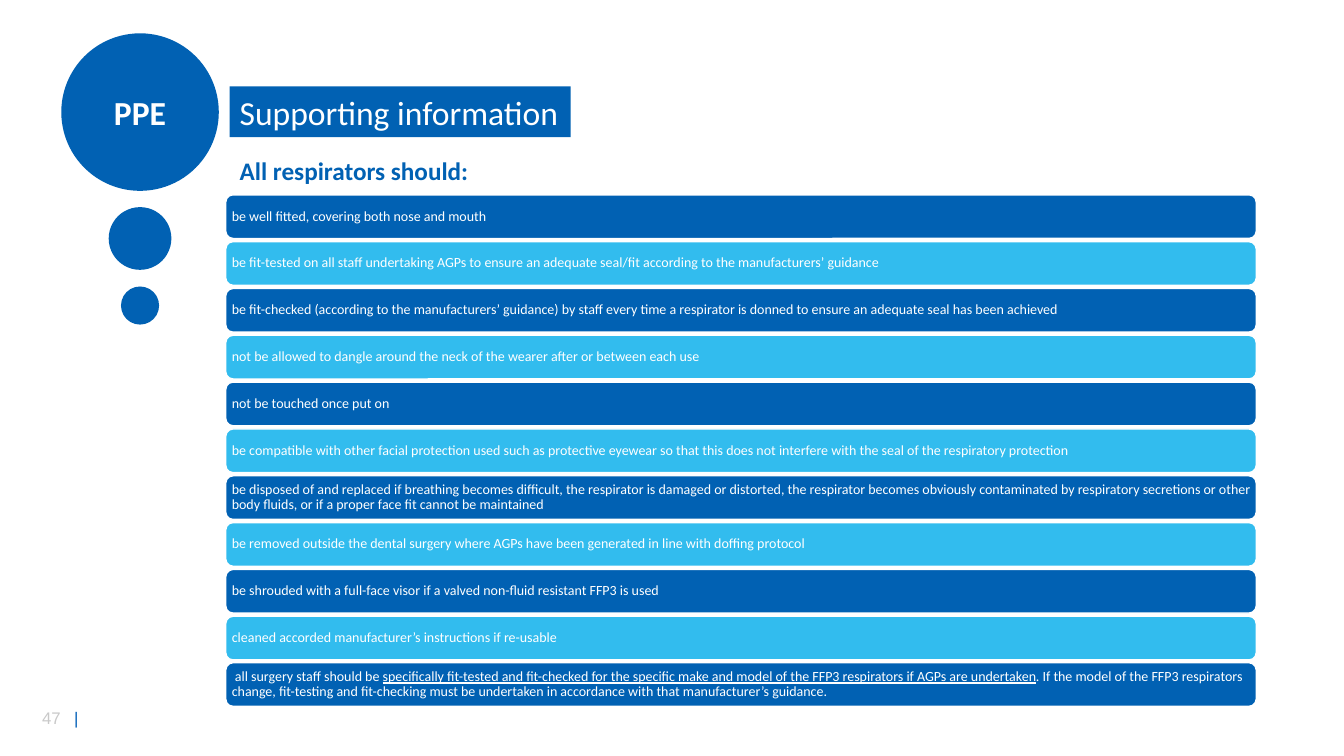
"""Build the PPE slide that lists what all respirators should do."""
import pptx
import pptx.dml.color
import pptx.enum.shapes
import pptx.enum.text
import pptx.oxml
import pptx.oxml.ns
import pptx.util

Cm = pptx.util.Cm
Pt = pptx.util.Pt
RGBColor = pptx.dml.color.RGBColor
SHAPE = pptx.enum.shapes.MSO_SHAPE
ALIGN = pptx.enum.text.PP_ALIGN
ANCHOR = pptx.enum.text.MSO_ANCHOR

BLUE = RGBColor(0x01, 0x61, 0xB3)
SKY = RGBColor(0x32, 0xBC, 0xEE)
WHITE = RGBColor(0xFF, 0xFF, 0xFF)
GREY = RGBColor(0xC9, 0xC9, 0xC9)
MARK_BLUE = RGBColor(0x00, 0x5E, 0xB8)

TITLE = "Supporting information"
SUBTITLE = "All respirators should:"
BADGE = "PPE"
PAGE_NUMBER = "47"
REQUIREMENTS = [
    "be well fitted, covering both nose and mouth",
    "be fit-tested on all staff undertaking AGPs to ensure an adequate seal/fit according to the manufacturers’ guidance",
    "be fit-checked (according to the manufacturers’ guidance) by staff every time a respirator is donned "
    "to ensure an adequate seal has been achieved",
    "not be allowed to dangle around the neck of the wearer after or between each use",
    "not be touched once put on",
    "be compatible with other facial protection used such as protective eyewear so that this does not "
    "interfere with the seal of the respiratory protection",
    "be disposed of and replaced if breathing becomes difficult, the respirator is damaged or distorted, "
    "the respirator becomes obviously contaminated by respiratory secretions or other body fluids, "
    "or if a proper face fit cannot be maintained",
    "be removed outside the dental surgery where AGPs have been generated in line with doffing protocol",
    "be shrouded with a full-face visor if a valved non-fluid resistant FFP3 is used",
    "cleaned accorded manufacturer’s instructions if re-usable",
]
STAFF_RULE = [
    ("all surgery staff should be ", {}),
    ("specifically fit-tested and fit-checked for the specific make and model of the FFP3 respirators "
     "if AGPs are undertaken", {"underline": True}),
    (". If the model of the FFP3 respirators change, fit-testing and fit-checking must be undertaken "
     "in accordance with that manufacturer’s guidance.", {}),
]

CIRCLE_CENTRE = 3.53
CIRCLES = [(0.84, 3.97), (5.22, 1.58), (7.22, 0.96)]
BAR_LEFT, BAR_TOP, BAR_WIDTH, BAR_HEIGHT = 5.69, 4.91, 25.97, 1.1
BAR_STEP = 1.18
STAFF_TOP = 16.7
HEADING_LEFT = 5.79


def write(shape, spans, **formats):
    """Write the spans as one paragraph with shared font values."""
    para = shape.text_frame.paragraphs[0]
    para.alignment = ALIGN.LEFT
    for text, changes in spans:
        span = para.add_run()
        span.text = text
        values = {"name": "Calibri", **formats, **changes}
        color = values.pop("color")
        for name, value in values.items():
            setattr(span.font, name, value)
        span.font.color.rgb = color
    return para


def add_filled(shapes, preset, left, top, width, height, color):
    """Add a flat filled shape without outline."""
    shape = shapes.add_shape(preset, Cm(left), Cm(top), Cm(width), Cm(height))
    shape.shadow.inherit = False
    shape.fill.solid()
    shape.fill.fore_color.rgb = color
    shape.line.fill.background()
    return shape


def add_bar(page, top, color, spans):
    """Add one rounded bar of the list."""
    bar = add_filled(page.shapes, SHAPE.ROUNDED_RECTANGLE, BAR_LEFT, top, BAR_WIDTH, BAR_HEIGHT, color)
    bar.line.color.rgb = WHITE
    bar.line.width = Pt(1)
    frame = bar.text_frame
    frame.word_wrap = True
    frame.vertical_anchor = ANCHOR.MIDDLE
    for side in ("left", "right", "top", "bottom"):
        setattr(frame, "margin_" + side, Cm(0.1))
    para = write(bar, spans, size=Pt(10), color=WHITE)
    para.line_spacing = 0.9
    return para


def add_badge(page):
    """Add the column of shrinking circles with its label."""
    group = page.shapes.add_group_shape()
    circles = [
        add_filled(group.shapes, SHAPE.OVAL, CIRCLE_CENTRE - size / 2, top, size, size, BLUE)
        for top, size in CIRCLES
    ]
    para = write(circles[0], [(BADGE, {})], size=Pt(24), bold=True, color=WHITE)
    para.alignment = ALIGN.CENTER


def add_page_number(page):
    """Add the page number and the mark at its tab stop."""
    box = page.shapes.add_textbox(Cm(0.81), Cm(17.7), Cm(1.8), Cm(0.76))
    box.text_frame.word_wrap = True
    properties = box.text_frame.paragraphs[0]._p.get_or_add_pPr()
    stops = pptx.oxml.parse_xml(
        f'<a:tabLst {pptx.oxml.ns.nsdecls("a")}><a:tab pos="{Cm(0.81)}" algn="l"/></a:tabLst>'
    )
    properties.append(stops)
    write(box, [(PAGE_NUMBER + "\t", {}), ("|", {"color": MARK_BLUE})],
          name="Arial", size=Pt(12), color=GREY)


def main():
    deck = pptx.Presentation()
    deck.slide_width, deck.slide_height = Cm(33.87), Cm(19.05)
    page = deck.slides.add_slide(deck.slide_layouts[6])

    add_page_number(page)
    add_badge(page)

    title = add_filled(page.shapes, SHAPE.RECTANGLE, HEADING_LEFT, 2.18, 8.59, 1.28, BLUE)
    title.text_frame.word_wrap = False
    write(title, [(TITLE, {})], size=Pt(24), color=WHITE)

    subtitle = page.shapes.add_textbox(Cm(HEADING_LEFT), Cm(3.79), Cm(6.32), Cm(1.03))
    subtitle.text_frame.word_wrap = False
    write(subtitle, [(SUBTITLE, {})], size=Pt(18), bold=True, color=BLUE)

    for index, text in enumerate(REQUIREMENTS):
        add_bar(page, BAR_TOP + index * BAR_STEP, (BLUE, SKY)[index % 2], [(text, {})])
    staff = add_bar(page, STAFF_TOP, BLUE, STAFF_RULE)
    for name, value in {"marL": 0, "indent": Cm(0.08)}.items():
        staff._p.get_or_add_pPr().set(name, str(int(value)))

    deck.save("out.pptx")


if __name__ == "__main__":
    main()
